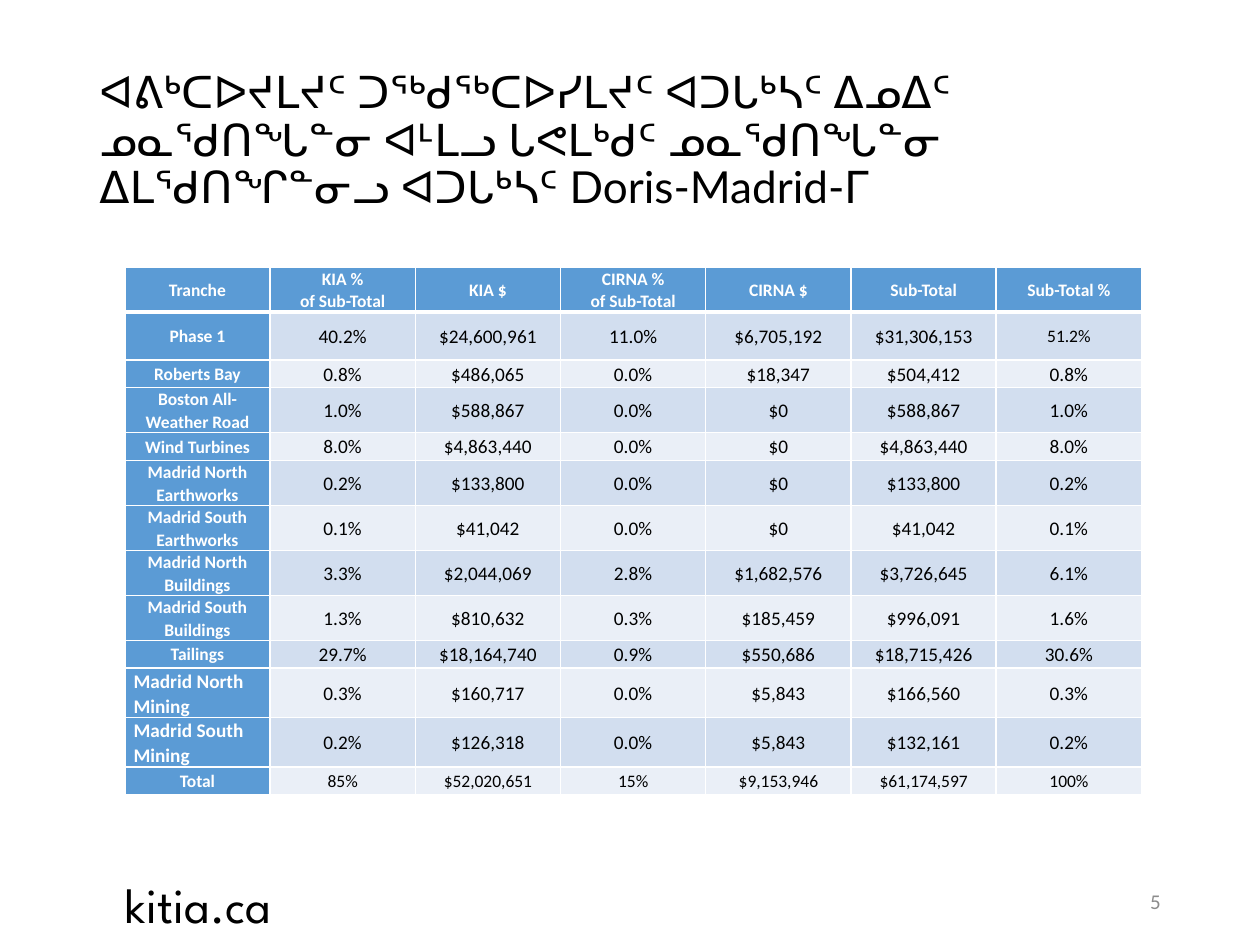
import pptx
import pptx.util
import pptx.dml.color
import pptx.enum.text
import pptx.oxml.ns
from lxml import etree

COLORS = {"black": "000000", "white": "FFFFFF", "gray": "8C8C8C",
          "head": "5B9BD5", "odd": "D2DEEF", "even": "EAEFF7"}
ALIGN = pptx.enum.text.PP_ALIGN
ANCHOR = pptx.enum.text.MSO_ANCHOR

prs = pptx.Presentation()
prs.slide_width = pptx.util.Inches(10)
prs.slide_height = pptx.util.Inches(7.5)
COL = prs.slide_width / 100
ROW = prs.slide_height / 75

TITLE = ("ᐊᕕᒃᑕᐅᔪᒪᔪᑦ ᑐᖅᑯᖅᑕᐅᓯᒪᔪᑦ ᐊᑐᒐᒃᓴᑦ ᐃᓄᐃᑦ ᓄᓇᖁᑎᖓᓐᓂ ᐊᒻᒪᓗ "
         "ᒐᕙᒪᒃᑯᑦ ᓄᓇᖁᑎᖓᓐᓂ ᐃᒪᖁᑎᖏᓐᓂᓗ ᐊᑐᒐᒃᓴᑦ Doris-Madrid-ᒥ")

DATA = [
    ["Tranche", "KIA %\nof Sub-Total", "KIA $", "CIRNA %\nof Sub-Total",
     "CIRNA $", "Sub-Total", "Sub-Total %"],
    ["Phase 1", "40.2%", "$24,600,961", "11.0%", "$6,705,192", "$31,306,153", "51.2%"],
    ["Roberts Bay", "0.8%", "$486,065", "0.0%", "$18,347", "$504,412", "0.8%"],
    ["Boston All-Weather Road", "1.0%", "$588,867", "0.0%", "$0", "$588,867", "1.0%"],
    ["Wind Turbines", "8.0%", "$4,863,440", "0.0%", "$0", "$4,863,440", "8.0%"],
    ["Madrid North Earthworks", "0.2%", "$133,800", "0.0%", "$0", "$133,800", "0.2%"],
    ["Madrid South Earthworks", "0.1%", "$41,042", "0.0%", "$0", "$41,042", "0.1%"],
    ["Madrid North Buildings", "3.3%", "$2,044,069", "2.8%", "$1,682,576", "$3,726,645", "6.1%"],
    ["Madrid South Buildings", "1.3%", "$810,632", "0.3%", "$185,459", "$996,091", "1.6%"],
    ["Tailings", "29.7%", "$18,164,740", "0.9%", "$550,686", "$18,715,426", "30.6%"],
    ["Madrid North Mining", "0.3%", "$160,717", "0.0%", "$5,843", "$166,560", "0.3%"],
    ["Madrid South Mining", "0.2%", "$126,318", "0.0%", "$5,843", "$132,161", "0.2%"],
    ["Total", "85%", "$52,020,651", "15%", "$9,153,946", "$61,174,597", "100%"],
]


def rgb(name):
    return pptx.dml.color.RGBColor.from_string(COLORS[name])


def grid_box(col, row, cols, rows):
    return [round(v) for v in (col * COL, row * ROW, cols * COL, rows * ROW)]


def write(tf, text, size, font="Calibri", color="black", bold=False,
          align=ALIGN.LEFT, spacing=1.0):
    for i, line in enumerate(text.split("\n")):
        p = tf.add_paragraph() if i else tf.paragraphs[0]
        p.alignment = align
        p.line_spacing = spacing
        r = p.add_run()
        r.text = line
        r.font.size = pptx.util.Pt(size)
        r.font.name = font
        r.font.bold = bold
        r.font.color.rgb = rgb(color)


def add_text(s, box, text, anchor=ANCHOR.TOP, **fmt):
    tf = s.shapes.add_textbox(*box).text_frame
    tf.word_wrap = True
    tf.vertical_anchor = anchor
    write(tf, text, **fmt)


def add_border(cell, side, points):
    ln = etree.SubElement(cell._tc.get_or_add_tcPr(), pptx.oxml.ns.qn("a:ln" + side),
                          w=str(pptx.util.Pt(points)))
    fill = etree.SubElement(ln, pptx.oxml.ns.qn("a:solidFill"))
    etree.SubElement(fill, pptx.oxml.ns.qn("a:srgbClr"), val=COLORS["white"])


def style_cell(cell, i, j, text):
    is_head = i == 0 or j == 0
    is_mining = j == 0 and text.endswith("Mining")
    is_small = text == "51.2%" or i == len(DATA) - 1
    for side in "LRTB":
        under_head = (i, side) in ((0, "B"), (1, "T"))
        add_border(cell, side, 3 if under_head else 1)
    cell.fill.solid()
    cell.fill.fore_color.rgb = rgb("head" if is_head else "odd" if i % 2 else "even")
    cell.margin_left = cell.margin_right = pptx.util.Inches(0.07)
    cell.margin_top = cell.margin_bottom = 0
    cell.vertical_anchor = ANCHOR.MIDDLE
    write(cell.text_frame, text, bold=is_head, spacing=1.07,
          size=10 if is_small or (is_head and not is_mining) else 11,
          color="white" if is_head else "black",
          align=ALIGN.LEFT if is_mining else ALIGN.CENTER)


def add_tranche_table(s, box):
    table = s.shapes.add_table(len(DATA), len(DATA[0]), *box).table
    for column in table.columns:
        column.width = box[2] // len(DATA[0])
    for i, values in enumerate(DATA):
        table.rows[i].height = round(ROW * (3.8 if i == 1 else 2.2))
        for j, text in enumerate(values):
            style_cell(table.cell(i, j), i, j, text)


def add_title(s, box):
    add_text(s, box, TITLE, anchor=ANCHOR.MIDDLE, size=25.2, font="Lato", spacing=0.9)


def add_footer(s, box):
    left, top, width, height = box
    add_text(s, (left, top, round(width * 0.29), height), "kitia.ca",
             size=28, font="League Spartan")
    number_width = round(width * 0.27)
    add_text(s, (left + width - number_width, round(top + 0.6 * ROW), number_width,
                 round(4 * ROW)),
             "5", anchor=ANCHOR.MIDDLE, size=12, color="gray", align=ALIGN.RIGHT)


def main():
    s = prs.slides.add_slide(prs.slide_layouts[6])
    add_title(s, grid_box(6.9, 4, 72.2, 14.5))
    add_tranche_table(s, grid_box(9.9, 21.2, 80.7, 41.7))
    add_footer(s, grid_box(9, 68.9, 84.1, 5.7))
    prs.save("out.pptx")


if __name__ == "__main__":
    main()
